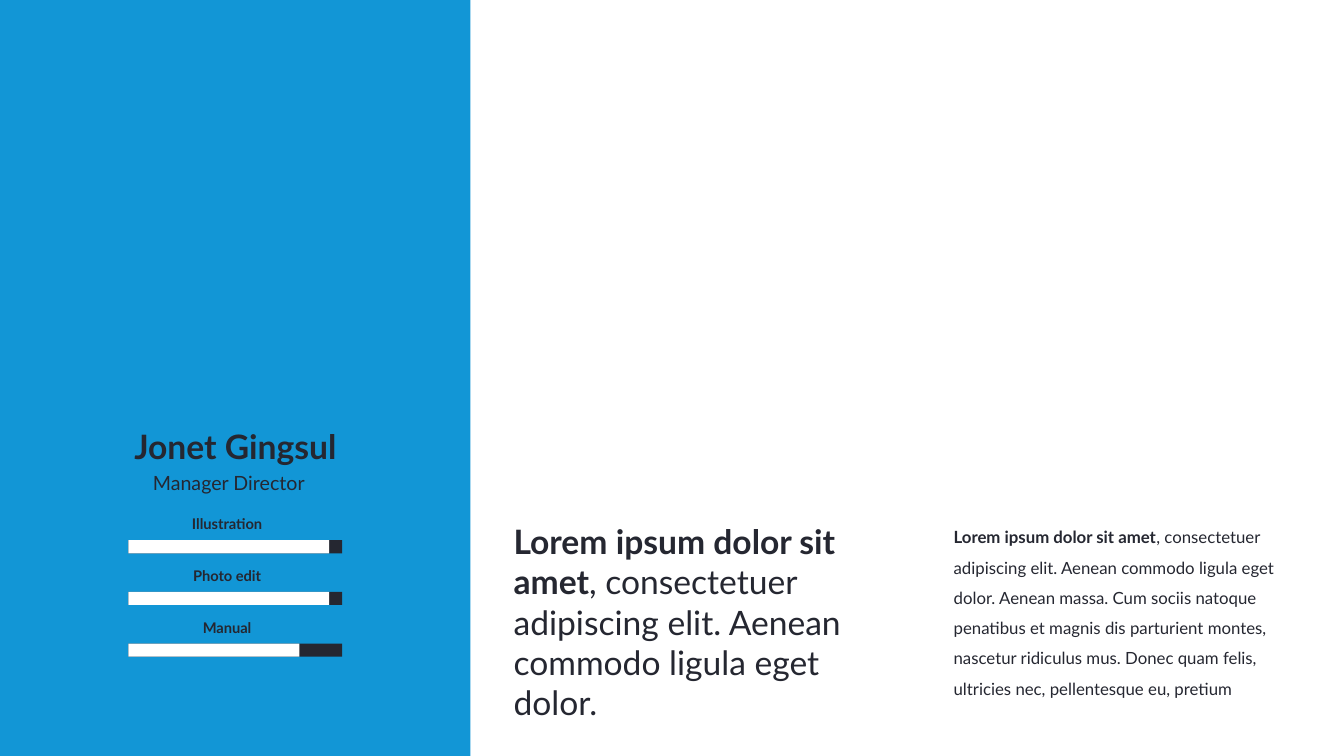
from pptx import Presentation
from pptx.dml.color import RGBColor
from pptx.enum.shapes import MSO_SHAPE as Shape
from pptx.enum.text import PP_ALIGN as Align
from pptx.util import Inches, Pt

WIDE, HIGH = 13.33, 7.5
BLUE, DARK, WHITE = "1296D6", "252731", "FFFFFF"
SKILLS = [("Illustration", 0.94), ("Photo edit", 0.94), ("Manual", 0.8)]
LEAD = "Lorem ipsum dolor sit amet"
INTRO = ", consectetuer adipiscing elit. Aenean commodo ligula eget dolor."
BODY = (INTRO + " Aenean massa. Cum sociis natoque penatibus et magnis dis "
        "parturient montes, nascetur ridiculus mus. Donec quam felis, "
        "ultricies nec, pellentesque eu, pretium")


def tint(code):
    return RGBColor.from_string(code)


def add_rect(slide, x, y, w, h, color):
    rect = slide.shapes.add_shape(Shape.RECTANGLE, *map(Inches, (x, y, w, h)))
    rect.shadow.inherit = False
    rect.fill.solid()
    rect.fill.fore_color.rgb = tint(color)
    rect.line.fill.background()


def add_text(slide, x, y, w, h, *runs, size=12, align=Align.LEFT,
             space=1.0, wrap=True):
    """Add one paragraph made of (text, bold) runs."""
    frame = slide.shapes.add_textbox(*map(Inches, (x, y, w, h))).text_frame
    frame.word_wrap = wrap
    para = frame.paragraphs[0]
    para.alignment = align
    para.line_spacing = space
    for text, bold in runs:
        run = para.add_run()
        run.text = text
        font = run.font
        font.name, font.size, font.bold = "Lato", Pt(size), bold
        font.color.rgb = tint(DARK)


def add_skill(slide, x, y, w, name, share):
    """Add a label above a bar that is filled up to the given share."""
    add_text(slide, x + 0.24, y, 1.48, 0.28, (name, True),
             size=10.5, align=Align.CENTER)
    for part, color in ((1, DARK), (share, WHITE)):
        add_rect(slide, x, y + 0.3, w * part, 0.13, color)


def add_panel(slide, x, y, w, h):
    """Add the coloured side panel with the person and the skills."""
    add_rect(slide, x, y, w, h, BLUE)
    add_text(slide, x + 1.11, y + 4.18, 2.45, 0.5, ("Jonet Gingsul", True),
             size=24, align=Align.CENTER, wrap=False)
    add_text(slide, x + 1.4, y + 4.62, 1.74, 0.34, ("Manager Director", False),
             size=14, align=Align.CENTER, wrap=False)
    bar = 2.12
    for row, (name, share) in enumerate(SKILLS):
        add_skill(slide, x + (w - bar) / 2, y + 5.06 + row * 0.513, bar,
                  name, share)


def add_story(slide, x, y, w, h):
    """Add the large intro and the small body text side by side."""
    add_text(slide, x + 0.33, y + 5.12, 3.66, 2.12,
             (LEAD, True), (INTRO, False), size=24)
    add_text(slide, x + w - 3.97, y + 5.08, 3.61, 1.9,
             (LEAD, True), (BODY, False), space=1.5)


def main():
    deck = Presentation()
    deck.slide_width, deck.slide_height = Inches(WIDE), Inches(HIGH)
    slide = deck.slides.add_slide(deck.slide_layouts[6])
    side = WIDE * 0.35
    add_panel(slide, 0, 0, side, HIGH)
    add_story(slide, side, 0, WIDE - side, HIGH)
    deck.save("out.pptx")


if __name__ == "__main__":
    main()
